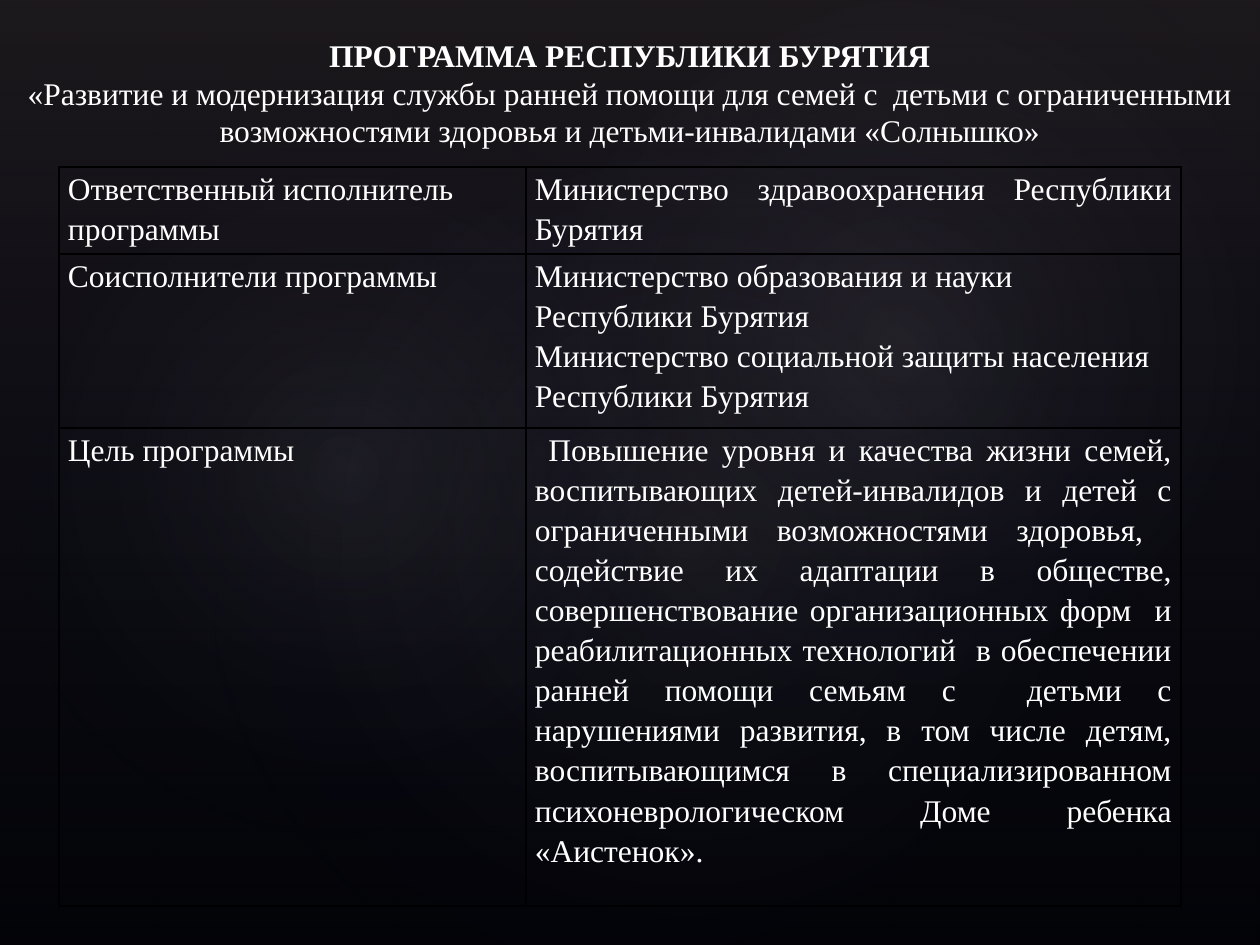
"""Build a slide with a regional programme summary table on a dark glowing backdrop."""
import dataclasses

import lxml.etree
import pptx
import pptx.dml.color
import pptx.enum.shapes
import pptx.enum.text
import pptx.oxml
import pptx.oxml.ns
import pptx.util

EMU_PER_PX = 914400 / 126
FONT = "Times New Roman"
WHITE = pptx.dml.color.RGBColor(0xFF, 0xFF, 0xFF)
BLACK = pptx.dml.color.RGBColor(0x00, 0x00, 0x00)
PLUM = pptx.dml.color.RGBColor(0x50, 0x46, 0x52)
NAVY = pptx.dml.color.RGBColor(0x24, 0x28, 0x52)
LILAC = pptx.dml.color.RGBColor(0xC4, 0xBC, 0xC6)
SHAPE = pptx.enum.shapes.MSO_SHAPE
ALIGN = pptx.enum.text.PP_ALIGN
LINEAR = '<a:lin ang="5400000" scaled="0"/>'
RADIAL = '<a:path path="circle"><a:fillToRect l="50000" t="50000" r="50000" b="50000"/></a:path>'


@dataclasses.dataclass(frozen=True)
class Stop:
    position: int
    color: pptx.dml.color.RGBColor
    opacity: int


@dataclasses.dataclass(frozen=True)
class Glow:
    left: int
    top: int
    width: int
    height: int
    rotation: float
    opacity: int


@dataclasses.dataclass(frozen=True)
class Row:
    height: int
    label: str
    values: tuple[str, ...]
    alignment: pptx.enum.text.PP_ALIGN


GLOWS = (
    Glow(189, 144, 998, 786, 328.7, 7),
    Glow(-38, 161, 764, 617, 294.3, 8),
    Glow(451, 16, 893, 655, 328.7, 8),
)
TITLE = "ПРОГРАММА РЕСПУБЛИКИ БУРЯТИЯ"
SUBTITLE = (
    "«Развитие и модернизация службы ранней помощи для семей с  детьми с ограниченными "
    "возможностями здоровья и детьми-инвалидами «Солнышко»"
)
GOAL = (
    " Повышение уровня и качества жизни семей, воспитывающих детей-инвалидов и детей с "
    "ограниченными возможностями здоровья,  содействие их адаптации в обществе, "
    "совершенствование организационных форм  и реабилитационных технологий  в обеспечении "
    "ранней помощи семьям с  детьми с нарушениями развития, в том числе детям, "
    "воспитывающимся в специализированном психоневрологическом Доме ребенка «Аистенок»."
)
ROWS = (
    Row(87, "Ответственный исполнитель программы",
        ("Министерство здравоохранения Республики Бурятия",), ALIGN.JUSTIFY),
    Row(174, "Соисполнители программы",
        ("Министерство образования и науки Республики Бурятия",
         "Министерство социальной защиты населения Республики Бурятия"), ALIGN.LEFT),
    Row(478, "Цель программы", (GOAL,), ALIGN.JUSTIFY),
)
COLUMN_WIDTHS = (467, 655)


def px(length: int) -> int:
    """Convert pixels to EMU."""
    return round(length * EMU_PER_PX)


def xml(markup: str) -> lxml.etree.ElementBase:
    """Parse one drawing element, declaring its namespace."""
    tag, rest = markup.split(" ", 1)
    return pptx.oxml.parse_xml(f"{tag} {pptx.oxml.ns.nsdecls('a')} {rest}")


def write(frame, texts, *, alignment=ALIGN.LEFT, bold_first=False, spacing=1.0) -> None:
    """Write one paragraph per text."""
    frame.word_wrap = True
    for index, text in enumerate(texts):
        paragraph = frame.add_paragraph() if index else frame.paragraphs[0]
        paragraph.alignment = alignment
        paragraph.line_spacing = spacing
        run = paragraph.add_run()
        run.text = text
        run.font.name = FONT
        run.font.size = pptx.util.Pt(18)
        run.font.bold = bold_first and index == 0
        run.font.color.rgb = WHITE


def add_gradient_shape(slide, kind, box: tuple[int, ...], stops: tuple[Stop, ...],
                       direction: str, rotation: float = 0) -> None:
    """Add an outline-free shape with a translucent gradient."""
    shape = slide.shapes.add_shape(kind, *map(px, box))
    shape.rotation = rotation
    shape.shadow.inherit = False
    shape.line.fill.background()
    marks = "".join(
        f'<a:gs pos="{stop.position * 1000}"><a:srgbClr val="{stop.color}">'
        f'<a:alpha val="{stop.opacity * 1000}"/></a:srgbClr></a:gs>' for stop in stops)
    gradient = xml(f'<a:gradFill rotWithShape="1"><a:gsLst>{marks}</a:gsLst>{direction}</a:gradFill>')
    shape.element.spPr.find(pptx.oxml.ns.qn("a:prstGeom")).addnext(gradient)


def add_backdrop(slide) -> None:
    """Paint the black background, the top sheen and the glows."""
    fill = slide.background.fill
    fill.solid()
    fill.fore_color.rgb = BLACK
    add_gradient_shape(slide, SHAPE.RECTANGLE, (0, 0, 1260, 945),
                       (Stop(0, PLUM, 36), Stop(100, NAVY, 10)), LINEAR)
    for glow in GLOWS:
        add_gradient_shape(slide, SHAPE.OVAL, (glow.left, glow.top, glow.width, glow.height),
                           (Stop(0, LILAC, glow.opacity), Stop(58, NAVY, 0)), RADIAL, glow.rotation)


def add_title(slide) -> None:
    """Add the centred heading."""
    frame = slide.shapes.add_textbox(px(0), px(29), px(1260), px(127)).text_frame
    frame.vertical_anchor = pptx.enum.text.MSO_ANCHOR.MIDDLE
    frame.auto_size = pptx.enum.text.MSO_AUTO_SIZE.SHAPE_TO_FIT_TEXT
    write(frame, (TITLE, SUBTITLE), alignment=ALIGN.CENTER, bold_first=True)


def fill_cell(cell, texts: tuple[str, ...], alignment) -> None:
    """Write and border one transparent cell."""
    cell.margin_left = cell.margin_right = px(9)
    cell.margin_top = cell.margin_bottom = 0
    cell.fill.background()
    write(cell.text_frame, texts, alignment=alignment, spacing=1.15)
    properties = cell._tc.get_or_add_tcPr()
    for index, side in enumerate("LRTB"):
        properties.insert(index, xml(
            f'<a:ln{side} w="12700"><a:solidFill><a:srgbClr val="{BLACK}"/></a:solidFill></a:ln{side}>'))


def add_programme_table(slide) -> None:
    """Add the table of programme details."""
    height = sum(row.height for row in ROWS)
    table = slide.shapes.add_table(len(ROWS), len(COLUMN_WIDTHS), px(59), px(167),
                                   px(sum(COLUMN_WIDTHS)), px(height)).table
    table.first_row = table.horz_banding = False
    for column, width in zip(table.columns, COLUMN_WIDTHS):
        column.width = px(width)
    for index, row in enumerate(ROWS):
        table.rows[index].height = px(row.height)
        fill_cell(table.cell(index, 0), (row.label,), ALIGN.LEFT)
        fill_cell(table.cell(index, 1), row.values, row.alignment)


def main() -> None:
    """Build and save the slide."""
    presentation = pptx.Presentation()
    presentation.slide_width, presentation.slide_height = px(1260), px(945)
    slide = presentation.slides.add_slide(presentation.slide_layouts[6])
    add_backdrop(slide)
    add_title(slide)
    add_programme_table(slide)
    presentation.save("out.pptx")


if __name__ == "__main__":
    main()
